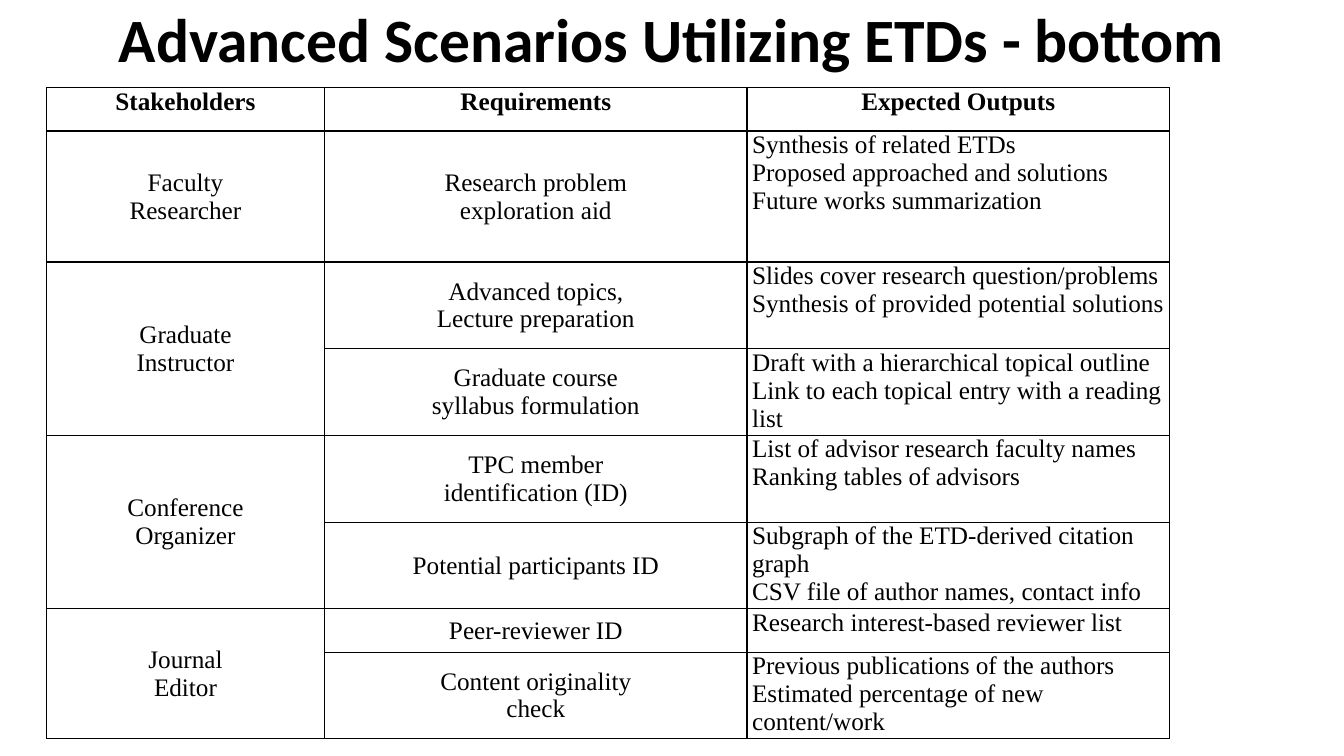
from dataclasses import dataclass
from typing import Any

from lxml.etree import SubElement
from pptx import Presentation
from pptx.dml.color import RGBColor
from pptx.enum.text import MSO_ANCHOR, MSO_AUTO_SIZE, PP_ALIGN
from pptx.oxml.ns import qn
from pptx.slide import Slide
from pptx.table import Table, _Cell
from pptx.text.text import TextFrame
from pptx.util import Pt

EMU_PER_PX = 9144
BLACK = "000000"
WHITE = "FFFFFF"
COLUMN_WIDTHS = (276, 419, 419)
HEADINGS = ("Stakeholders", "Requirements", "Expected Outputs")
TITLE_FONT = {"name": "Calibri", "size": Pt(44), "bold": True}
HEADING_FONT = {"name": "Times New Roman", "size": Pt(18), "bold": True}
BODY_FONT = HEADING_FONT | {"bold": False}


@dataclass(frozen=True)
class Scenario:
    height: int
    requirement: str
    outputs: str


@dataclass(frozen=True)
class Stakeholder:
    name: str
    scenarios: tuple[Scenario, ...]


STAKEHOLDERS = (
    Stakeholder("Faculty\nResearcher", (
        Scenario(130, "Research problem\nexploration aid",
                 "Synthesis of related ETDs\nProposed approached and solutions\n"
                 "Future works summarization"),
    )),
    Stakeholder("Graduate\nInstructor", (
        Scenario(86, "Advanced topics,\nLecture preparation",
                 "Slides cover research question/problems\n"
                 "Synthesis of provided potential solutions"),
        Scenario(86, "Graduate course\nsyllabus formulation",
                 "Draft with a hierarchical topical outline\n"
                 "Link to each topical entry with a reading list"),
    )),
    Stakeholder("Conference\nOrganizer", (
        Scenario(86, "TPC member\nidentification (ID)",
                 "List of advisor research faculty names\nRanking tables of advisors"),
        Scenario(86, "Potential participants ID",
                 "Subgraph of the ETD-derived citation graph\n"
                 "CSV file of author names, contact info"),
    )),
    Stakeholder("Journal\nEditor", (
        Scenario(43, "Peer-reviewer ID", "Research interest-based reviewer list"),
        Scenario(86, "Content originality\ncheck",
                 "Previous publications of the authors\n"
                 "Estimated percentage of new content/work"),
    )),
)


def px(length: int) -> int:
    return length * EMU_PER_PX


def color(value: str) -> RGBColor:
    return RGBColor.from_string(value)


def apply(target: Any, values: dict[str, Any]) -> None:
    for name, value in values.items():
        setattr(target, name, value)


def write(frame: TextFrame, text: str, font: dict[str, Any], layout: dict[str, Any]) -> None:
    frame.text = text
    for para in frame.paragraphs:
        apply(para, layout)
        for span in para.runs:
            apply(span.font, font)
            span.font.color.rgb = color(BLACK)


def style_cell(cell: _Cell) -> None:
    apply(cell, {"margin_left": px(5), "margin_right": px(5),
                 "margin_top": 0, "margin_bottom": 0})
    properties = cell._tc.get_or_add_tcPr()
    for side in ("lnL", "lnR", "lnT", "lnB"):
        line = SubElement(properties, qn(f"a:{side}"), w=str(Pt(1)))
        fill = SubElement(line, qn("a:solidFill"))
        SubElement(fill, qn("a:srgbClr"), val=BLACK)
    cell.fill.solid()
    cell.fill.fore_color.rgb = color(WHITE)


def write_cell(cell: _Cell, text: str, font: dict[str, Any],
               align: PP_ALIGN, anchor: MSO_ANCHOR) -> None:
    write(cell.text_frame, text, font, {"alignment": align})
    cell.vertical_anchor = anchor


def fill_table(table: Table) -> None:
    for column, heading in enumerate(HEADINGS):
        write_cell(table.cell(0, column), heading, HEADING_FONT,
                   PP_ALIGN.CENTER, MSO_ANCHOR.TOP)
    row = 1
    for stakeholder in STAKEHOLDERS:
        name_cell = table.cell(row, 0)
        last_row = row + len(stakeholder.scenarios) - 1
        if last_row > row:
            name_cell.merge(table.cell(last_row, 0))
        write_cell(name_cell, stakeholder.name, BODY_FONT,
                   PP_ALIGN.CENTER, MSO_ANCHOR.MIDDLE)
        for scenario in stakeholder.scenarios:
            write_cell(table.cell(row, 1), scenario.requirement, BODY_FONT,
                       PP_ALIGN.CENTER, MSO_ANCHOR.MIDDLE)
            write_cell(table.cell(row, 2), scenario.outputs, BODY_FONT,
                       PP_ALIGN.LEFT, MSO_ANCHOR.TOP)
            row += 1


def add_title(page: Slide) -> None:
    title = page.shapes.title
    apply(title, {"left": px(92), "top": 0, "width": px(1150), "height": px(84)})
    apply(title.text_frame, {"auto_size": MSO_AUTO_SIZE.NONE, "word_wrap": True,
                             "vertical_anchor": MSO_ANCHOR.MIDDLE})
    write(title.text_frame, "Advanced Scenarios Utilizing ETDs - bottom", TITLE_FONT,
          {"alignment": PP_ALIGN.CENTER, "line_spacing": 0.9})


def add_scenario_table(page: Slide) -> None:
    heights = [43] + [scenario.height for stakeholder in STAKEHOLDERS
                      for scenario in stakeholder.scenarios]
    table = page.shapes.add_table(len(heights), len(COLUMN_WIDTHS), px(46), px(87),
                                  px(sum(COLUMN_WIDTHS)), px(sum(heights))).table
    apply(table, {"first_row": False, "horz_banding": False})
    for column, width in zip(table.columns, COLUMN_WIDTHS):
        column.width = px(width)
    for row, height in zip(table.rows, heights):
        row.height = px(height)
    for cell in table.iter_cells():
        style_cell(cell)
    fill_table(table)


def main() -> None:
    deck = Presentation()
    apply(deck, {"slide_width": px(1333), "slide_height": px(750)})
    page = deck.slides.add_slide(deck.slide_layouts[5])
    add_title(page)
    add_scenario_table(page)
    deck.save("out.pptx")


if __name__ == "__main__":
    main()
